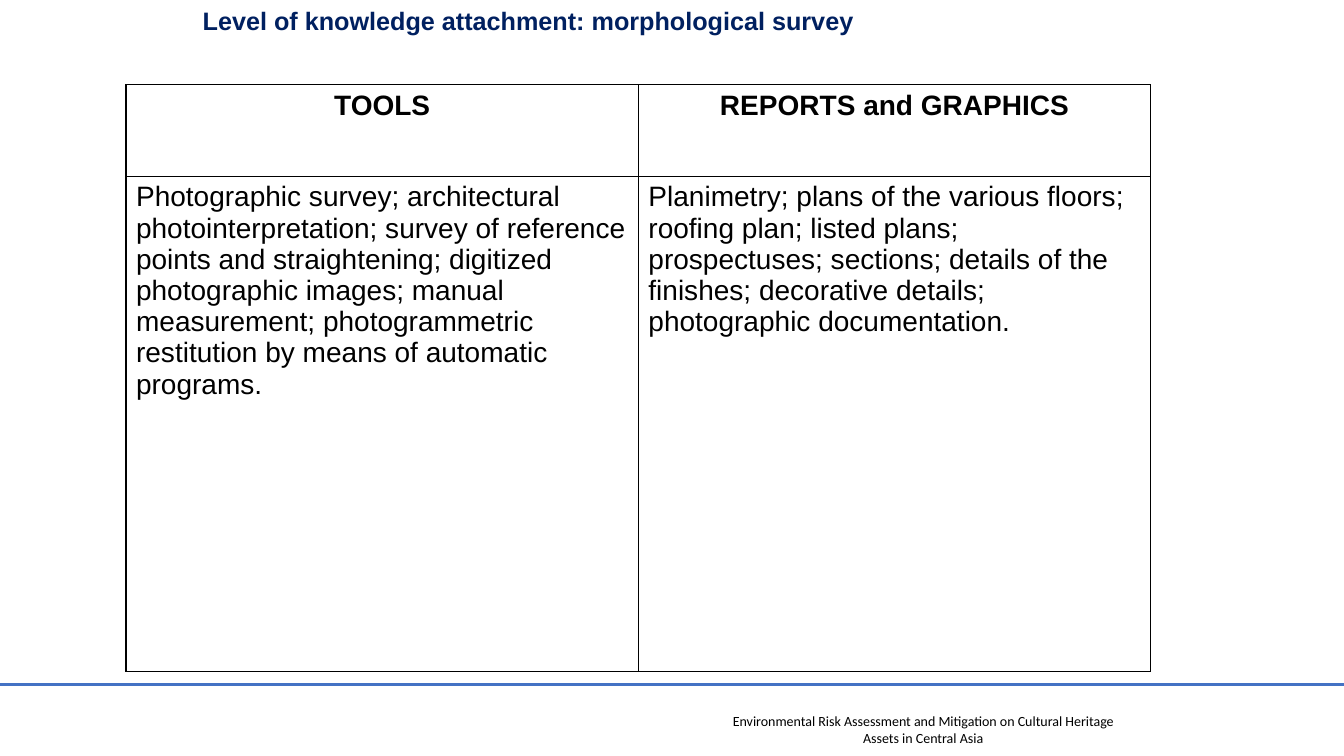
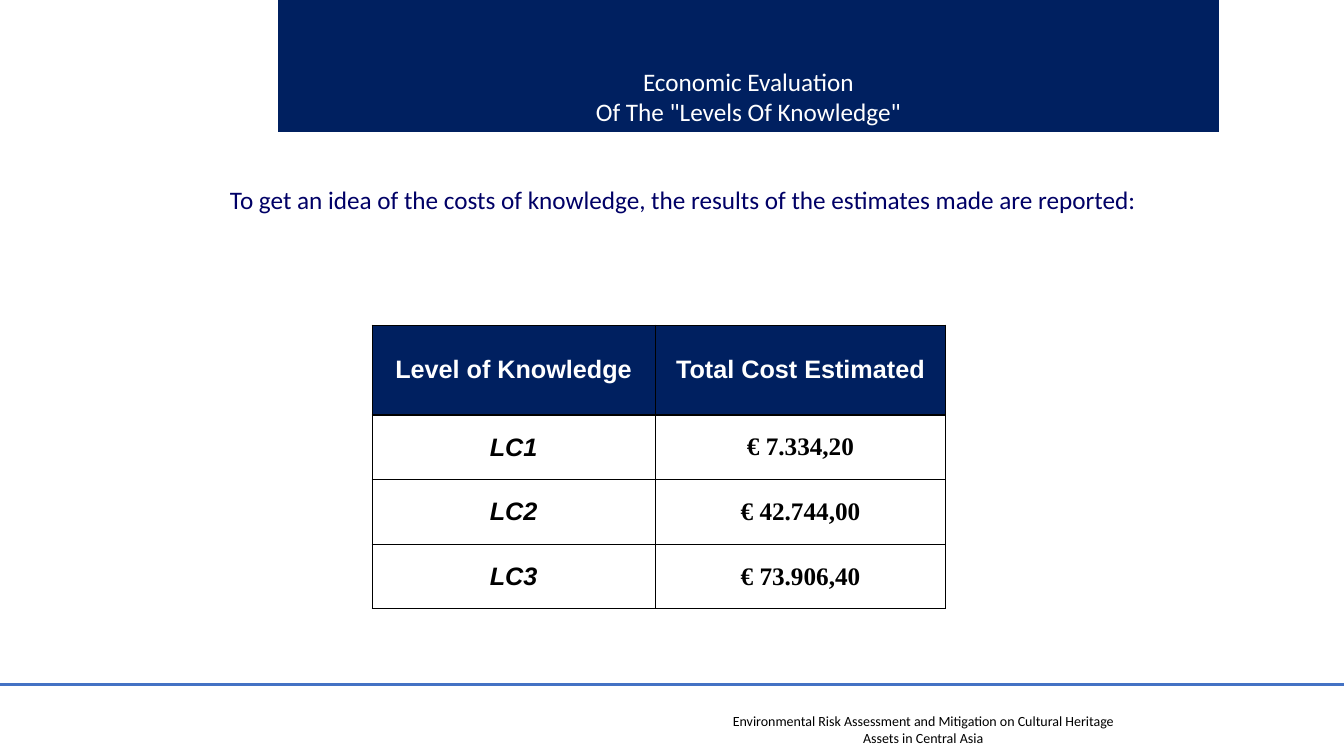
from dataclasses import dataclass

from lxml import etree
from pptx import Presentation
from pptx.dml.color import RGBColor
from pptx.enum.shapes import MSO_CONNECTOR
from pptx.enum.text import MSO_ANCHOR, MSO_AUTO_SIZE, PP_ALIGN
from pptx.oxml.ns import qn
from pptx.util import Emu, Inches, Pt

LEFT, CENTER = PP_ALIGN.LEFT, PP_ALIGN.CENTER
TOP, MIDDLE, BOTTOM = MSO_ANCHOR.TOP, MSO_ANCHOR.MIDDLE, MSO_ANCHOR.BOTTOM
STRAIGHT = MSO_CONNECTOR.STRAIGHT
NO_AUTOFIT = MSO_AUTO_SIZE.NONE

SLIDE_WIDTH, SLIDE_HEIGHT = Inches(13.33), Inches(7.5)
COLUMNS, ROWS = 160, 90
TITLE_ONLY = 5


@dataclass(frozen=True)
class Theme:
    navy: str = "002060"
    intro: str = "000066"
    rule: str = "4472C4"
    white: str = "FFFFFF"
    black: str = "000000"
    sans: str = "Arial"
    humanist: str = "Calibri"
    serif: str = "Times New Roman"
    footer_size: int = 10
    text_size: int = 18
    large_size: int = 20
    rule_width: float = 2.25
    border_width: float = 1


THEME = Theme()


@dataclass(frozen=True)
class Box:
    """A place given in columns and rows of the slide grid."""
    column: float
    row: float
    columns: float
    rows: float

    def emu(self) -> tuple[Emu, Emu, Emu, Emu]:
        return across(self.column), down(self.row), across(self.columns), down(self.rows)


@dataclass(frozen=True)
class TextStyle:
    font: str
    size: int
    color: str
    bold: bool = False
    italic: bool = False
    align: PP_ALIGN = CENTER


@dataclass(frozen=True)
class CellStyle:
    text: TextStyle
    fill: str = THEME.white
    anchor: MSO_ANCHOR = MIDDLE


@dataclass(frozen=True)
class TableSpec:
    column: float
    row: float
    widths: list[float]
    heights: list[float]
    header: CellStyle
    body: list[CellStyle]
    texts: list[list[str]]


FOOTER = TextStyle(THEME.humanist, THEME.footer_size, THEME.black)
SURVEY_TITLE = TextStyle(THEME.sans, THEME.text_size, THEME.navy, bold=True)
COST_TITLE = TextStyle(THEME.humanist, THEME.text_size, THEME.white)
INTRO = TextStyle(THEME.humanist, THEME.text_size, THEME.intro, align=LEFT)

SURVEY_HEADER = CellStyle(
    TextStyle(THEME.sans, THEME.large_size, THEME.black, bold=True), anchor=TOP)
SURVEY_BODY = CellStyle(
    TextStyle(THEME.sans, THEME.large_size, THEME.black, align=LEFT), anchor=TOP)
COST_HEADER = CellStyle(
    TextStyle(THEME.sans, THEME.text_size, THEME.white, bold=True), THEME.navy)
COST_LEVEL = CellStyle(
    TextStyle(THEME.sans, THEME.text_size, THEME.black, bold=True, italic=True))
COST_AMOUNT = CellStyle(
    TextStyle(THEME.serif, THEME.text_size, THEME.black, bold=True))

SURVEY_TABLE = TableSpec(
    15, 10.1, [61, 61], [10.9, 58.9], SURVEY_HEADER, [SURVEY_BODY, SURVEY_BODY],
    [["TOOLS", "REPORTS and GRAPHICS"],
     ["Photographic survey; architectural photointerpretation; survey of reference "
      "points and straightening; digitized photographic images; manual measurement; "
      "photogrammetric restitution by means of automatic programs.",
      "Planimetry; plans of the various floors; roofing plan; listed plans; "
      "prospectuses; sections; details of the finishes; decorative details; "
      "photographic documentation."]])
COST_TABLE = TableSpec(
    44.3, 38.7, [33.7, 34.6], [10.7, 7.7, 7.7, 7.7], COST_HEADER, [COST_LEVEL, COST_AMOUNT],
    [["Level of Knowledge", "Total Cost Estimated"],
     ["LC1", "€ 7.334,20"],
     ["LC2", "€ 42.744,00"],
     ["LC3", "€ 73.906,40"]])


def across(columns: float) -> Emu:
    return Emu(round(SLIDE_WIDTH * columns / COLUMNS))


def down(rows: float) -> Emu:
    return Emu(round(SLIDE_HEIGHT * rows / ROWS))


def write(frame, text: str, style: TextStyle) -> None:
    frame.word_wrap = True
    frame.text = text
    for paragraph in frame.paragraphs:
        paragraph.alignment = style.align
        font = paragraph.font
        font.name, font.size = style.font, Pt(style.size)
        font.bold, font.italic = style.bold, style.italic
        font.color.rgb = RGBColor.from_string(style.color)


def add_text(slide, box: Box, text: str, style: TextStyle):
    label = slide.shapes.add_textbox(*box.emu())
    write(label.text_frame, text, style)
    return label


def set_title(slide, box: Box, text: str, style: TextStyle, fill: str,
              anchor: MSO_ANCHOR) -> None:
    title = slide.shapes.title
    title.left, title.top, title.width, title.height = box.emu()
    title.fill.solid()
    title.fill.fore_color.rgb = RGBColor.from_string(fill)
    write(title.text_frame, text, style)
    title.text_frame.auto_size = NO_AUTOFIT
    title.text_frame.vertical_anchor = anchor


def add_borders(cell) -> None:
    properties = cell._tc.get_or_add_tcPr()
    for side in ("a:lnL", "a:lnR", "a:lnT", "a:lnB"):
        line = etree.SubElement(properties, qn(side), w=str(Pt(THEME.border_width)))
        fill = etree.SubElement(line, qn("a:solidFill"))
        etree.SubElement(fill, qn("a:srgbClr"), val=THEME.black)


def add_table(slide, spec: TableSpec) -> None:
    box = Box(spec.column, spec.row, sum(spec.widths), sum(spec.heights))
    table = slide.shapes.add_table(len(spec.heights), len(spec.widths), *box.emu()).table
    table.horz_banding = False
    for column, width in zip(table.columns, spec.widths):
        column.width = across(width)
    for row, height in zip(table.rows, spec.heights):
        row.height = down(height)
    for r, texts in enumerate(spec.texts):
        for c, text in enumerate(texts):
            style = spec.body[c] if r else spec.header
            cell = table.cell(r, c)
            add_borders(cell)
            cell.fill.solid()
            cell.fill.fore_color.rgb = RGBColor.from_string(style.fill)
            cell.vertical_anchor = style.anchor
            write(cell.text_frame, text, style.text)


def move_footer_to_layout(slide) -> None:
    """Draw the footer on a slide, then hand it to the layout all slides share."""
    footer = add_text(slide, Box(84.3, 84.2, 51.2, 5.3),
                      "Environmental Risk Assessment and Mitigation on Cultural Heritage "
                      "Assets in Central Asia", FOOTER)
    rule = slide.shapes.add_connector(
        STRAIGHT, 0, down(81.5), across(COLUMNS), down(81.5))
    rule.line.color.rgb = RGBColor.from_string(THEME.rule)
    rule.line.width = Pt(THEME.rule_width)
    etree.SubElement(rule.element.spPr, qn("a:effectLst"))
    for shape in (footer, rule):
        slide.slide_layout.shapes.element.append(shape.element)


def build_survey(slide) -> None:
    set_title(slide, Box(15, 0, 95.8, 7.8),
              "Level of knowledge attachment: morphological survey",
              SURVEY_TITLE, THEME.white, TOP)
    add_table(slide, SURVEY_TABLE)


def build_costs(slide) -> None:
    set_title(slide, Box(33.1, 0, 112, 15.7),
              'Economic Evaluation\nOf The "Levels Of Knowledge"',
              COST_TITLE, THEME.navy, BOTTOM)
    add_table(slide, COST_TABLE)
    add_text(slide, Box(26.2, 21.4, 115.3, 4.8),
             "To get an idea of the costs of knowledge, the results of the estimates "
             "made are reported:", INTRO)


def main() -> None:
    deck = Presentation()
    deck.slide_width, deck.slide_height = SLIDE_WIDTH, SLIDE_HEIGHT
    layout = deck.slide_layouts[TITLE_ONLY]
    survey, costs = (deck.slides.add_slide(layout) for _ in range(2))
    move_footer_to_layout(survey)
    build_survey(survey)
    build_costs(costs)
    deck.save("out.pptx")


if __name__ == "__main__":
    main()
